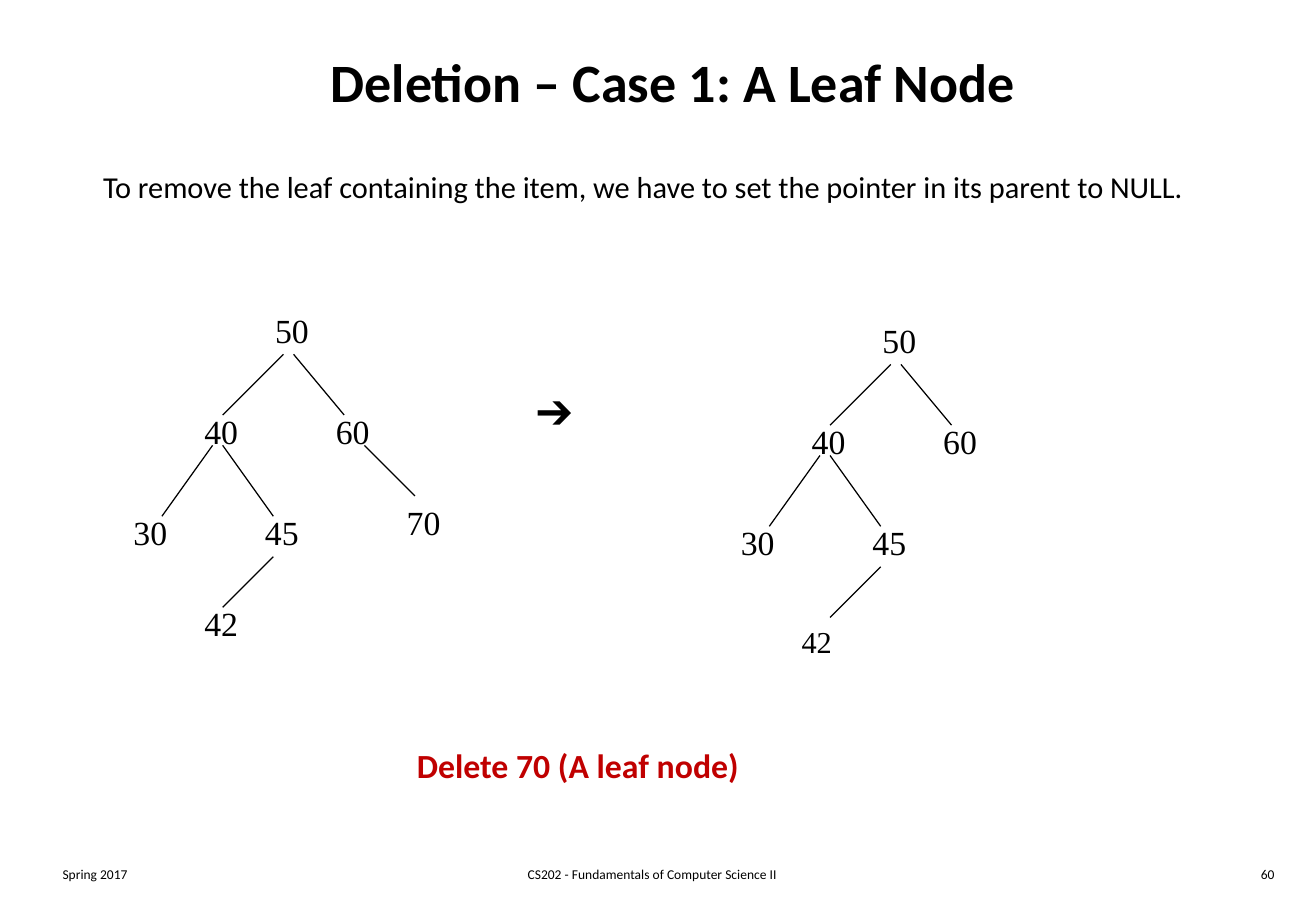
import pptx
import pptx.dml.color
import pptx.enum.shapes
import pptx.enum.text
import pptx.oxml.ns
import pptx.util
from lxml import etree

PX = 7620  # EMU per px, 120 px to the inch
COLOURS = {"ink": "000000", "accent": "C00000", "paper": "FFFFFF"}
ALIGN = pptx.enum.text.PP_ALIGN

# Trees: value -> top left of its label, then the branches between them
NODES = {
    "50": (260, 300), "40": (190, 400), "60": (320, 400),
    "30": (120, 500), "45": (250, 500), "42": (190, 590),
}
BRANCHES = [
    (280, 350, 220, 410), (290, 350, 340, 410),
    (210, 440, 160, 510), (220, 440, 270, 510),
    (270, 550, 220, 600),
]
LEAF = {"70": (390, 490)}
LEAF_BRANCH = (360, 440, 410, 490)


def px(*lengths):
    return [pptx.util.Emu(length * PX) for length in lengths]


def colour(name):
    return pptx.dml.color.RGBColor.from_string(COLOURS[name])


def write(box, text, size, font="Calibri", ink="ink", bold=False, align=ALIGN.LEFT):
    para = box.text_frame.paragraphs[0]
    para.alignment = align
    span = para.add_run()
    span.text = text
    span.font.name = font
    span.font.size = pptx.util.Pt(size)
    span.font.bold = bold
    span.font.color.rgb = colour(ink)


def add_label(shapes, text, place, size, wrap=False, **style):
    box = shapes.add_textbox(*px(*place))
    box.text_frame.word_wrap = wrap
    if not wrap:
        box.text_frame.auto_size = pptx.enum.text.MSO_AUTO_SIZE.SHAPE_TO_FIT_TEXT
    write(box, text, size, **style)


def add_branch(shapes, ends):
    branch = shapes.add_connector(pptx.enum.shapes.MSO_CONNECTOR.STRAIGHT, *px(*ends))
    branch.line.color.rgb = colour("ink")
    branch.line.width = pptx.util.Pt(0.75)
    properties = branch._element.spPr
    etree.SubElement(properties, pptx.oxml.ns.qn("a:effectLst"))


def add_tree(page, nodes, branches, right=0, down=0, small=()):
    tree = page.shapes.add_group_shape()
    for x1, y1, x2, y2 in branches:
        add_branch(tree.shapes, (x1 + right, y1 + down, x2 + right, y2 + down))
    for value, (x, y) in nodes.items():
        width, height, size = (54, 48, 18) if value in small else (58, 52, 20)
        add_label(tree.shapes, value, (x + right, y + down, width, height), size,
                  font="Times New Roman")


def add_title(page, text, place):
    title = page.shapes.title
    title.left, title.top, title.width, title.height = px(*place)
    title.text_frame.vertical_anchor = pptx.enum.text.MSO_ANCHOR.MIDDLE
    write(title, text, 32, bold=True, align=ALIGN.CENTER)


def add_footer(page):
    parts = [
        ("Spring 2017", 50, 271, ALIGN.LEFT),
        ("CS202 - Fundamentals of Computer Science II", 401, 487, ALIGN.CENTER),
        ("60", 1000, 271, ALIGN.RIGHT),
    ]
    for text, left, width, align in parts:
        add_label(page.shapes, text, (left, 850, width, 30), 8, wrap=True, align=align)


def main():
    deck = pptx.Presentation()
    deck.slide_width, deck.slide_height = px(1300, 900)
    page = deck.slides.add_slide(deck.slide_layouts[5])
    page.background.fill.solid()
    page.background.fill.fore_color.rgb = colour("paper")

    # Heading and explanation
    add_title(page, "Deletion – Case 1: A Leaf Node", (50, 20, 1230, 120))
    add_label(page.shapes,
              "To remove the leaf containing the item, we have to set the pointer "
              "in its parent to NULL.", (90, 160, 1103, 48), 18)

    # Tree before and after the deletion
    add_tree(page, {**NODES, **LEAF}, [*BRANCHES, LEAF_BRANCH])
    add_label(page.shapes, "➔", (518, 376, 67, 60), 24, font="Times New Roman")
    add_tree(page, {**NODES, "42": (180, 600)}, BRANCHES, right=600, down=10,
             small=("42",))

    # Caption and footer
    add_label(page.shapes, "Delete 70 (A leaf node)", (400, 730, 346, 53), 20,
              ink="accent", bold=True)
    add_footer(page)
    deck.save("out.pptx")


if __name__ == "__main__":
    main()
